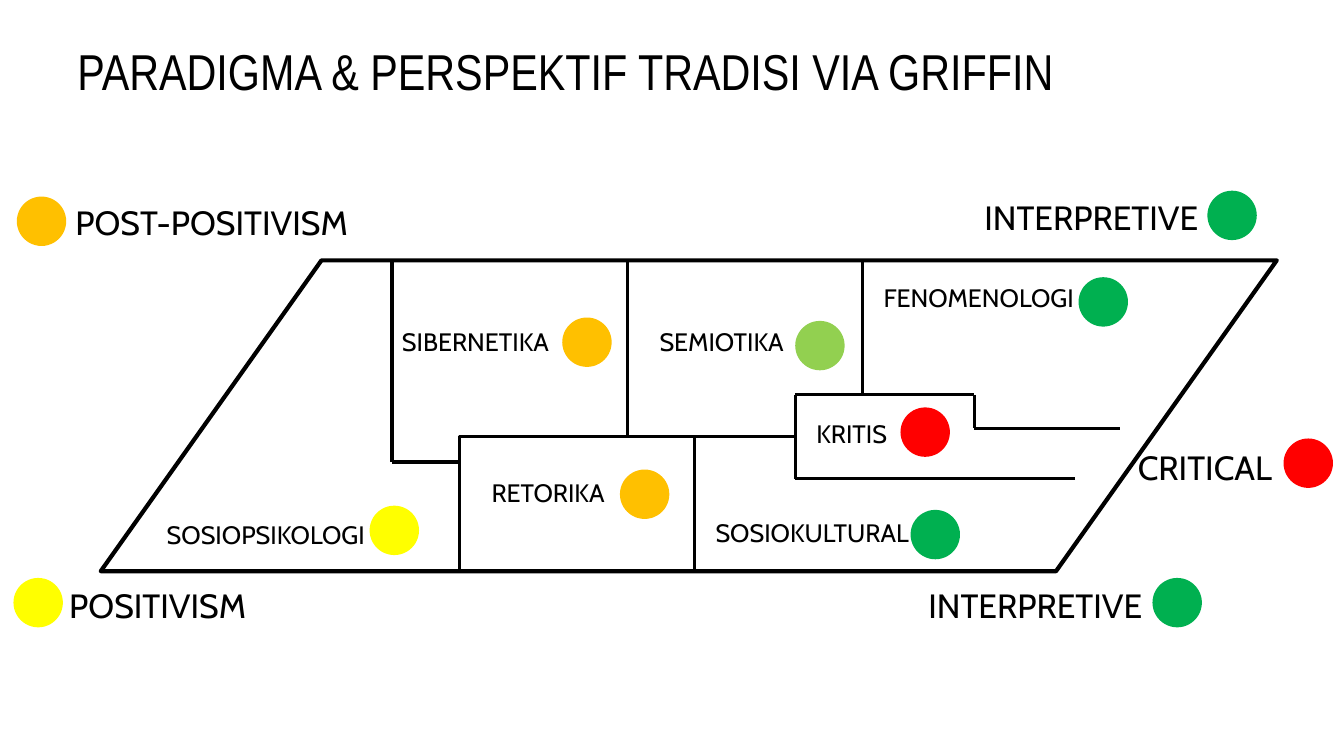
import itertools
from dataclasses import dataclass

import pptx
import pptx.dml.color
import pptx.enum.shapes
import pptx.enum.text
import pptx.oxml
import pptx.oxml.ns
import pptx.util

Shape = pptx.enum.shapes.MSO_SHAPE
Point = tuple[float, float]  # column, row

# The slide is a grid of 120 columns by 90 rows
SLIDE_WIDTH, SLIDE_HEIGHT = pptx.util.Inches(13.33), pptx.util.Inches(7.5)
COLUMNS, ROWS = 120, 90


@dataclass(frozen=True)
class Theme:
    ink: str = "000000"
    post_positivism: str = "FFC000"
    positivism: str = "FFFF00"
    semiotic: str = "92D050"
    interpretive: str = "00B050"
    critical: str = "FF0000"
    title_font: str = "Arial Narrow"
    label_font: str = "Cabin"
    title_size: float = 36
    paradigm_size: float = 24
    tradition_size: float = 18
    frame_line: float = 3
    border_line: float = 2.25
    dot_diameter: float = 0.49


THEME = Theme()


@dataclass(frozen=True)
class Marker:
    """A label and the coloured dot that shows its paradigm."""
    text: str
    label_at: Point
    label_columns: float
    dot_at: Point
    color: str
    size: float = THEME.tradition_size

    @property
    def label_rows(self) -> float:
        return 6.1 if self.size == THEME.paradigm_size else 4.8


BIG = THEME.paradigm_size
MARKERS = [
    # Paradigms around the map
    Marker("POST-POSITIVISM", (5.85, 23.5), 38, (1.5, 23.4), THEME.post_positivism, BIG),
    Marker("POSITIVISM", (5.3, 69), 38, (1.2, 68.8), THEME.positivism, BIG),
    Marker("INTERPRETIVE", (87, 22.9), 32, (107.8, 22.7), THEME.interpretive, BIG),
    Marker("INTERPRETIVE", (82, 69), 32, (102.9, 68.8), THEME.interpretive, BIG),
    Marker("CRITICAL", (100.7, 52.6), 21, (114.6, 52.2), THEME.critical, BIG),
    # Traditions inside the map
    Marker("SOSIOPSIKOLOGI", (14, 61.2), 32, (33, 60.2), THEME.positivism),
    Marker("SIBERNETIKA", (35, 38.2), 22, (50.2, 37.8), THEME.post_positivism),
    Marker("RETORIKA", (43, 56.2), 18, (55.35, 55.9), THEME.post_positivism),
    Marker("SEMIOTIKA", (58, 38.2), 19, (71, 38.2), THEME.semiotic),
    Marker("FENOMENOLOGI", (78, 33), 32, (96.3, 33), THEME.interpretive),
    Marker("SOSIOKULTURAL", (63, 61), 27, (81.3, 60.7), THEME.interpretive),
    Marker("KRITIS", (72, 49.2), 15, (80.4, 48.5), THEME.critical),
]

# Borders between traditions, each a chain of grid points
MAP_TOP, MAP_BOTTOM = 31, 68
RETORIKA_TOP, KRITIS_TOP = 52, 47
BORDERS: list[list[Point]] = [
    [(35, MAP_TOP), (35, 55), (41, 55)],
    [(56, MAP_TOP), (56, RETORIKA_TOP)],
    [(62, RETORIKA_TOP), (71, RETORIKA_TOP)],
    [(96, 57), (71, 57), (71, KRITIS_TOP), (87, KRITIS_TOP), (87, 51), (100, 51)],
    [(77, MAP_TOP), (77, KRITIS_TOP)],
]


def x(column: float) -> int:
    return round(SLIDE_WIDTH * column / COLUMNS)


def y(row: float) -> int:
    return round(SLIDE_HEIGHT * row / ROWS)


def rgb(color: str) -> pptx.dml.color.RGBColor:
    return pptx.dml.color.RGBColor.from_string(color)


def style_line(line, width: float) -> None:
    line.color.rgb = rgb(THEME.ink)
    line.width = pptx.util.Pt(width)


def style_text(paragraph, font: str, size: float) -> None:
    paragraph.alignment = pptx.enum.text.PP_ALIGN.LEFT
    paragraph.font.name = font
    paragraph.font.size = pptx.util.Pt(size)
    paragraph.font.color.rgb = rgb(THEME.ink)


def draw_title(slide, text: str) -> None:
    title = slide.shapes.title
    title.left, title.top, title.width, title.height = x(6), y(5), x(108), y(11)
    frame = title.text_frame
    frame.text = text
    frame.auto_size = pptx.enum.text.MSO_AUTO_SIZE.NONE
    frame.vertical_anchor = pptx.enum.text.MSO_ANCHOR.TOP
    frame.paragraphs[0].line_spacing = 0.9
    style_text(frame.paragraphs[0], THEME.title_font, THEME.title_size)


def draw_outline(slide, kind: Shape, left: float, top: float, columns: float, width: float):
    outline = slide.shapes.add_shape(kind, x(left), y(top), x(columns), y(MAP_BOTTOM - top))
    outline.shadow.inherit = False
    outline.fill.background()
    style_line(outline.line, width)
    return outline


def draw_border(slide, start: Point, end: Point) -> None:
    border = slide.shapes.add_connector(
        pptx.enum.shapes.MSO_CONNECTOR.STRAIGHT,
        x(start[0]), y(start[1]), x(end[0]), y(end[1]))
    style_line(border.line, THEME.border_line)
    border._element.spPr.append(
        pptx.oxml.parse_xml(f"<a:effectLst {pptx.oxml.ns.nsdecls('a')}/>"))


def draw_label(slide, marker: Marker) -> None:
    column, row = marker.label_at
    label = slide.shapes.add_textbox(
        x(column), y(row), x(marker.label_columns), y(marker.label_rows))
    frame = label.text_frame
    frame.word_wrap = True
    frame.auto_size = pptx.enum.text.MSO_AUTO_SIZE.SHAPE_TO_FIT_TEXT
    frame.text = marker.text
    style_text(frame.paragraphs[0], THEME.label_font, marker.size)


def draw_dot(slide, marker: Marker) -> None:
    column, row = marker.dot_at
    diameter = pptx.util.Inches(THEME.dot_diameter)
    dot = slide.shapes.add_shape(Shape.OVAL, x(column), y(row), diameter, diameter)
    dot.shadow.inherit = False
    dot.fill.solid()
    dot.fill.fore_color.rgb = rgb(marker.color)
    dot.line.fill.background()


def main() -> None:
    deck = pptx.Presentation()
    deck.slide_width, deck.slide_height = SLIDE_WIDTH, SLIDE_HEIGHT
    slide = deck.slides.add_slide(deck.slide_layouts.get_by_name("Title Only"))
    draw_title(slide, "PARADIGMA & PERSPEKTIF TRADISI VIA GRIFFIN")

    # Map of traditions
    territory = draw_outline(slide, Shape.PARALLELOGRAM, 9, MAP_TOP, 105, THEME.frame_line)
    territory.adjustments[0] = 0.71
    draw_outline(slide, Shape.RECTANGLE, 41, RETORIKA_TOP, 21, THEME.border_line)
    for border in BORDERS:
        for start, end in itertools.pairwise(border):
            draw_border(slide, start, end)

    # Labels first, so that every dot stays in front
    for marker in MARKERS:
        draw_label(slide, marker)
    for marker in MARKERS:
        draw_dot(slide, marker)

    deck.save("out.pptx")


if __name__ == "__main__":
    main()
